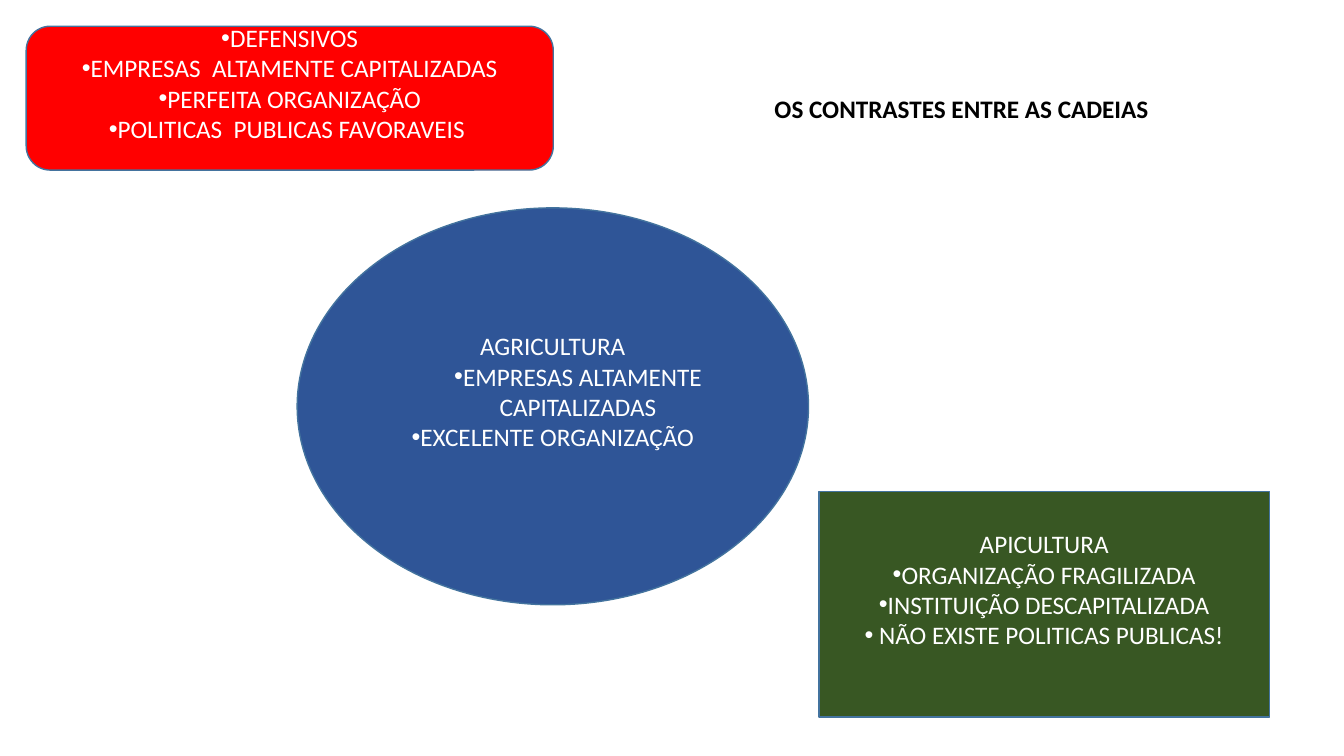
from pptx import Presentation
from pptx import util as u
from pptx.dml.color import RGBColor
from pptx.enum import shapes, text
from pptx.oxml.ns import qn
from lxml import etree

PX = 9525  # EMU per px, 96 px to the inch
FONT = "Calibri"
LINE_HEIGHT = 29  # one line of 18 pt text, in px
COLORS = {
    "red": "FF0000",
    "blue": "2F5597",
    "green": "385723",
    "outline": "43739E",
    "white": "FFFFFF",
    "black": "000000",
}


def px(length):
    return u.Emu(length * PX)


def color(name):
    return RGBColor.from_string(COLORS[name])


def place(shape, left, top, width, height):
    shape.left, shape.top = px(left), px(top)
    shape.width, shape.height = px(width), px(height)


def add_bullet(paragraph, indent):
    properties = paragraph._p.get_or_add_pPr()
    properties.set("marL", str(px(indent)))
    properties.set("indent", "0")
    etree.SubElement(properties, qn("a:buFont")).set("typeface", "Arial")
    etree.SubElement(properties, qn("a:buChar")).set("char", "•")


def write(paragraph, words, *, ink="white", bold=False, bullet=False, level=0,
          align=text.PP_ALIGN.CENTER):
    paragraph.alignment = align
    paragraph.level = level
    if bullet:
        add_bullet(paragraph, 48 * level)
    run = paragraph.add_run()
    run.text = words
    run.font.name = FONT
    run.font.size = u.Pt(18)
    run.font.bold = bold
    run.font.color.rgb = color(ink)


def add_title(slide, words, box):
    title = slide.shapes.title
    place(title, *box)
    frame = title.text_frame
    frame.word_wrap = False
    frame.auto_size = text.MSO_AUTO_SIZE.SHAPE_TO_FIT_TEXT
    frame.vertical_anchor = text.MSO_ANCHOR.TOP
    write(frame.paragraphs[0], words, ink="black", bold=True,
          align=text.PP_ALIGN.LEFT)


def add_chain(slide, kind, box, fill, lines):
    """Add a filled shape; each line is its words and its format."""
    shape = slide.shapes.add_shape(kind, *map(px, box))
    shape.shadow.inherit = False
    shape.fill.solid()
    shape.fill.fore_color.rgb = color(fill)
    shape.line.color.rgb = color("outline")
    shape.line.width = u.Pt(1)
    frame = shape.text_frame
    frame.word_wrap = True
    frame.vertical_anchor = text.MSO_ANCHOR.MIDDLE
    # Text sits half a line above the middle
    frame.margin_top = 0
    frame.margin_bottom = px(LINE_HEIGHT)
    for index, (words, style) in enumerate(lines):
        paragraph = frame.add_paragraph() if index else frame.paragraphs[0]
        write(paragraph, words, **style)


def main():
    presentation = Presentation()
    presentation.slide_width, presentation.slide_height = px(1280), px(720)
    slide = presentation.slides.add_slide(presentation.slide_layouts[5])

    heading = {}
    item = {"bullet": True}
    subitem = {"bullet": True, "level": 1}
    kinds = shapes.MSO_SHAPE

    # Title
    add_title(slide, "OS CONTRASTES ENTRE AS CADEIAS", (728, 84, 379, 38))

    # Pesticides
    add_chain(slide, kinds.ROUNDED_RECTANGLE, (25, 25, 502, 137), "red", [
        ("DEFENSIVOS", item),
        ("EMPRESAS  ALTAMENTE CAPITALIZADAS", item),
        ("PERFEITA ORGANIZAÇÃO", item),
        ("POLITICAS  PUBLICAS FAVORAVEIS ", item),
    ])

    # Agriculture
    add_chain(slide, kinds.OVAL, (283, 198, 487, 378), "blue", [
        ("AGRICULTURA", heading),
        ("EMPRESAS ALTAMENTE CAPITALIZADAS", subitem),
        ("EXCELENTE ORGANIZAÇÃO", item),
    ])

    # Beekeeping
    add_chain(slide, kinds.RECTANGLE, (780, 468, 429, 215), "green", [
        ("APICULTURA", heading),
        ("ORGANIZAÇÃO FRAGILIZADA", item),
        ("INSTITUIÇÃO DESCAPITALIZADA", item),
        (" NÃO EXISTE POLITICAS PUBLICAS!", item),
    ])

    presentation.save("out.pptx")


if __name__ == "__main__":
    main()
